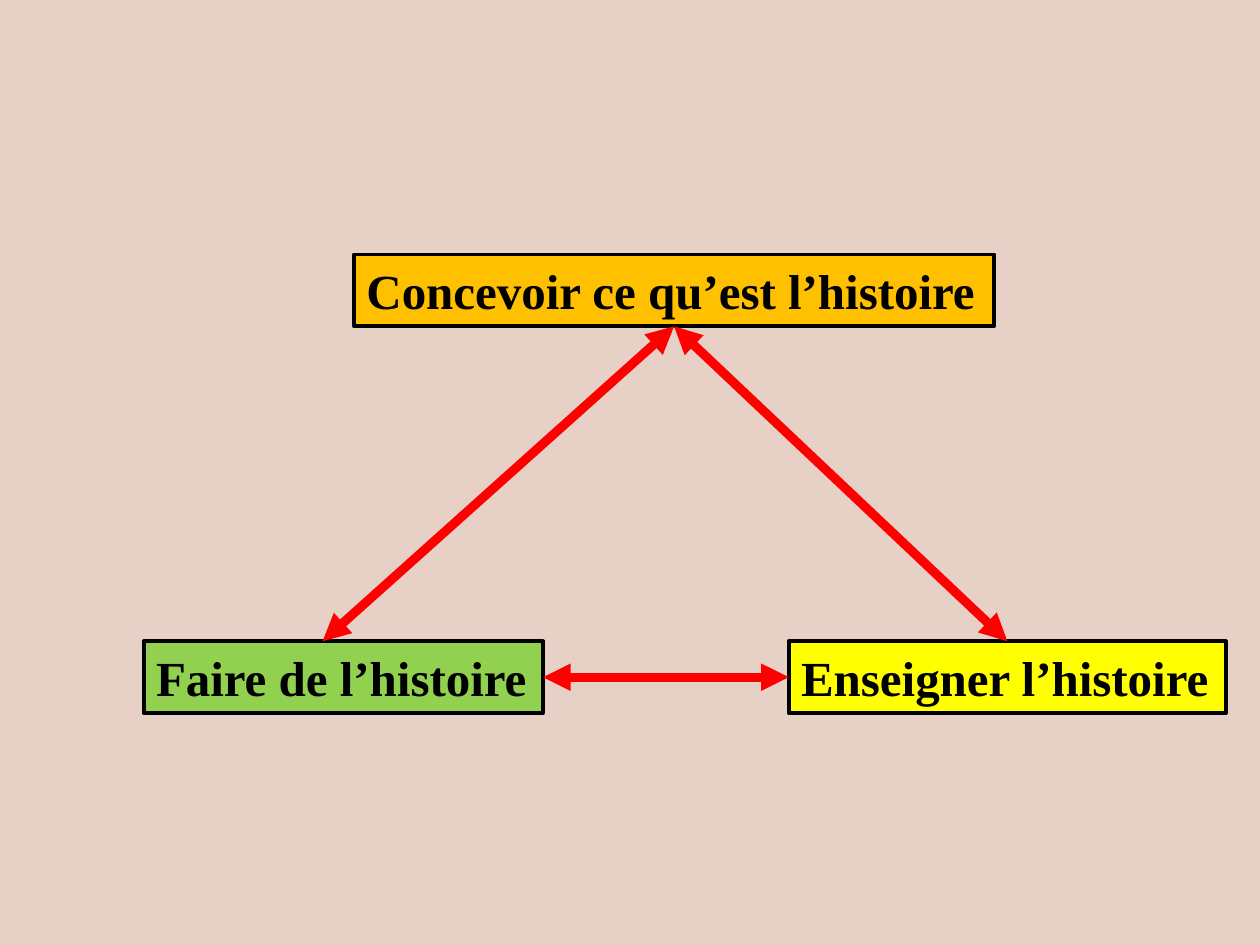
from dataclasses import dataclass

from lxml import etree
from pptx import Presentation
from pptx.dml.color import RGBColor
from pptx.enum.shapes import MSO_CONNECTOR
from pptx.enum.text import MSO_ANCHOR, MSO_AUTO_SIZE, PP_ALIGN
from pptx.oxml.ns import qn
from pptx.slide import Slide
from pptx.util import Inches, Pt

STRAIGHT = MSO_CONNECTOR.STRAIGHT
FIT_SHAPE = MSO_AUTO_SIZE.SHAPE_TO_FIT_TEXT
TOP = MSO_ANCHOR.TOP
LEFT = PP_ALIGN.LEFT
BLANK_LAYOUT = 6


@dataclass(frozen=True)
class Theme:
    background: RGBColor = RGBColor(0xE7, 0xD1, 0xC7)
    ink: RGBColor = RGBColor(0, 0, 0)
    orange: RGBColor = RGBColor(0xFF, 0xC0, 0x00)
    green: RGBColor = RGBColor(0x92, 0xD0, 0x50)
    yellow: RGBColor = RGBColor(0xFF, 0xFF, 0x00)
    arrow: RGBColor = RGBColor(0xFF, 0, 0)
    font: str = "Times New Roman"
    label_size: Pt = Pt(28)
    border_width: Pt = Pt(2.25)
    arrow_width: Pt = Pt(5.25)


THEME = Theme()
BOX_HEIGHT = 0.57
LABEL_FORMAT = {"name": THEME.font, "size": THEME.label_size, "bold": True}


@dataclass(frozen=True)
class Concept:
    text: str
    left: float
    top: float
    width: float
    fill: RGBColor

    @property
    def right(self) -> float:
        return self.left + self.width

    @property
    def bottom(self) -> float:
        return self.top + BOX_HEIGHT

    @property
    def center(self) -> float:
        return self.left + self.width / 2

    @property
    def middle(self) -> float:
        return self.top + BOX_HEIGHT / 2


@dataclass(frozen=True)
class Arrow:
    start: tuple[float, float]
    end: tuple[float, float]


CONCEIVE = Concept("Concevoir ce qu’est l’histoire", 2.81, 2.02, 5.08, THEME.orange)
PRACTISE = Concept("Faire de l’histoire", 1.14, 5.09, 3.17, THEME.green)
TEACH = Concept("Enseigner l’histoire", 6.26, 5.09, 3.47, THEME.yellow)

APEX = (CONCEIVE.center, CONCEIVE.bottom)
ARROWS = (
    Arrow(APEX, (TEACH.center, TEACH.top)),
    Arrow(APEX, (2.56, PRACTISE.top)),
    Arrow((PRACTISE.right, PRACTISE.middle), (TEACH.left, TEACH.middle)),
)


def draw_concept(page: Slide, concept: Concept) -> None:
    box = page.shapes.add_textbox(
        Inches(concept.left), Inches(concept.top),
        Inches(concept.width), Inches(BOX_HEIGHT),
    )
    box.fill.solid()
    box.fill.fore_color.rgb = concept.fill
    box.line.color.rgb = THEME.ink
    box.line.width = THEME.border_width

    frame = box.text_frame
    frame.word_wrap = False
    frame.auto_size = FIT_SHAPE
    frame.vertical_anchor = TOP
    para = frame.paragraphs[0]
    para.alignment = LEFT
    span = para.add_run()
    span.text = concept.text
    for name, value in LABEL_FORMAT.items():
        setattr(span.font, name, value)
    span.font.color.rgb = THEME.ink


def draw_arrow(page: Slide, arrow: Arrow) -> None:
    """Draw a straight connector with a triangle at both ends."""
    points = [Inches(length) for length in (*arrow.start, *arrow.end)]
    connector = page.shapes.add_connector(STRAIGHT, *points)
    connector.line.color.rgb = THEME.arrow
    connector.line.width = THEME.arrow_width
    outline = connector.line._get_or_add_ln()
    for end in ("a:headEnd", "a:tailEnd"):
        etree.SubElement(outline, qn(end), type="triangle")
    etree.SubElement(connector._element.spPr, qn("a:effectLst"))


def main() -> None:
    deck = Presentation()
    deck.slide_width, deck.slide_height = Inches(10), Inches(7.5)
    page = deck.slides.add_slide(deck.slide_layouts[BLANK_LAYOUT])
    page.background.fill.solid()
    page.background.fill.fore_color.rgb = THEME.background

    for concept in (CONCEIVE, PRACTISE, TEACH):
        draw_concept(page, concept)
    for arrow in ARROWS:
        draw_arrow(page, arrow)
    deck.save("out.pptx")


if __name__ == "__main__":
    main()
